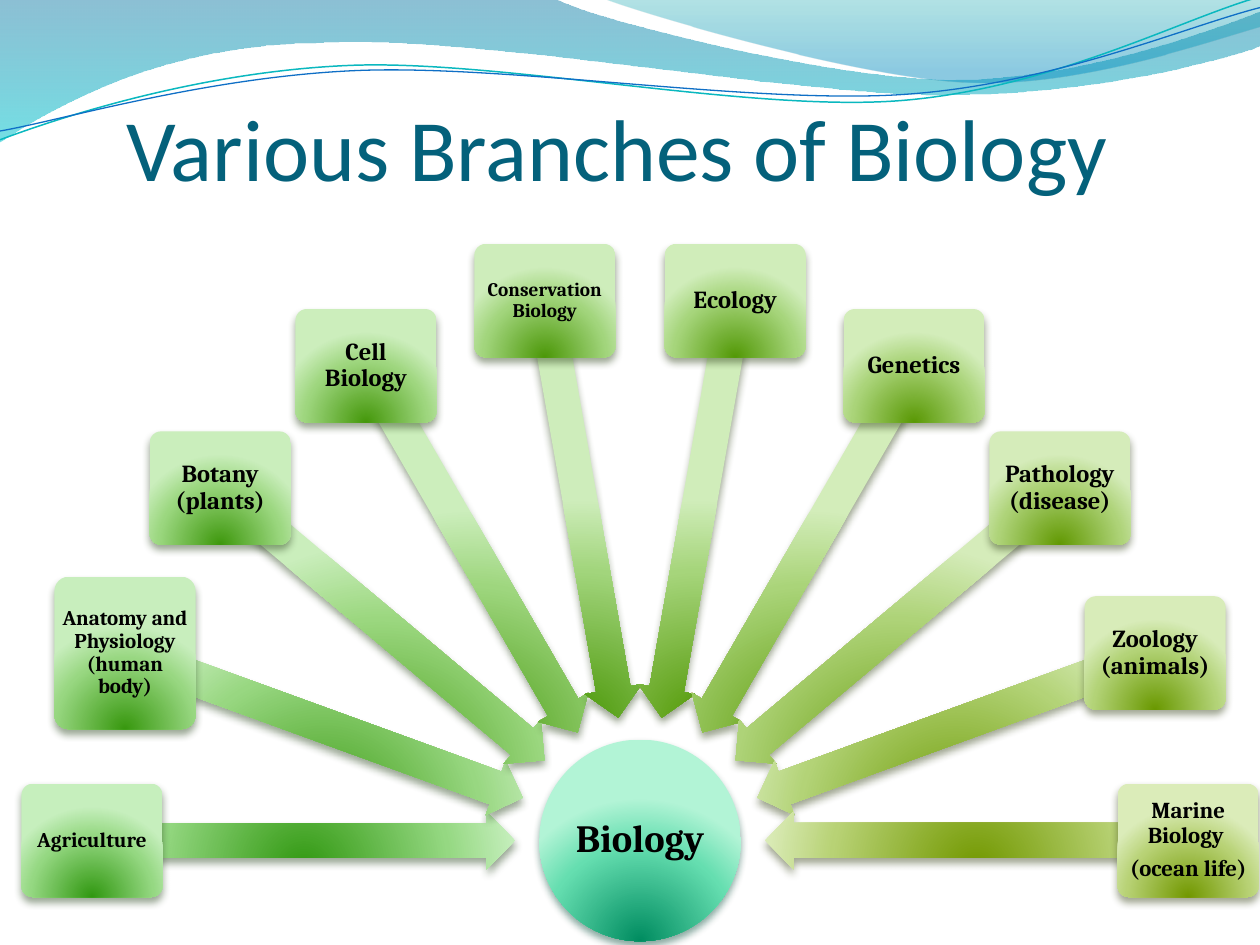
from math import cos, radians, sin

from pptx import Presentation
from pptx.dml.color import RGBColor
from pptx.enum.shapes import MSO_SHAPE
from pptx.enum.text import MSO_ANCHOR, PP_ALIGN
from pptx.oxml import parse_xml
from pptx.oxml.ns import nsdecls
from pptx.util import Inches, Pt

TITLE = "Various Branches of Biology"
HUB = "Biology"
BRANCHES = [
    ("Agriculture", 12, 0.9),
    ("Anatomy and Physiology (human body)", 12, 1.21),
    ("Botany (plants)", 14, 0.9),
    ("Cell Biology", 14, 0.9),
    ("Conservation Biology", 11, 0.9),
    ("Ecology", 14, 0.9),
    ("Genetics", 14, 0.9),
    ("Pathology (disease)", 14, 0.9),
    ("Zoology (animals)", 14, 0.9),
    ("Marine Biology \n(ocean life)", 13, 0.9),
]
COLORS = {
    "title": "04617B",
    "text": "000000",
    "hub": ("008C60", "65DEB0", "B2F4D6", "044A37"),
    "branches": [
        ("319811", "95D882", "C6EFBD", "2B4821"),
        ("38980F", "98D781", "C8EEBD", "2C4820"),
        ("3E980D", "9BD77F", "CAEEBC", "2E4720"),
        ("45980B", "9ED67E", "CCEEBC", "2F471F"),
        ("4C9809", "A2D57C", "CEEDBB", "31471E"),
        ("539907", "A6D57B", "D0EDBA", "33461D"),
        ("5A9905", "AAD479", "D3EDBA", "35461C"),
        ("629903", "AED378", "D5ECBA", "36461B"),
        ("6A9901", "B3D377", "D8ECB9", "38451A"),
        ("729800", "B8D275", "DBECB9", "3A4519"),
    ],
    "left wave": [(0, "0074A1", 45), (100, "00C6CF", 55)],
    "right wave": [(0, "00A1A9", 30), (80, "008BBF", 45)],
    "upper line": "0AB8BF",
    "lower line": "0F6FC6",
}
WAVES = [
    ("left wave", (-0.01, -0.01, 10.02, 1.14), [
        (0, -0.01), (4.4, -0.01),
        (4.76, 0.17, 6.64, 0.63, 7.58, 0.63), (8.53, 0.63, 9.58, 0.26, 10, 0.09),
        (10.01, 0.36), (9.83, 0.44, 8.7, 0.76, 7.46, 0.75),
        (6.22, 0.75, 3.82, 0.28, 2.57, 0.34), (1.29, 0.35, 0.46, 0.83, -0.01, 1.13),
        (0, -0.01),
    ]),
    ("right wave", (4.79, -0.01, 5.21, 0.7), [
        (4.79, -0.01), (5.09, 0.11, 6.82, 0.62, 7.69, 0.65),
        (8.56, 0.69, 9.61, 0.32, 10, 0.21), (10, 0), (4.79, -0.01),
    ]),
]
WAVE_LINES = [
    ("upper line", 0.85, (-0.02, 0.22, 10.02, 0.71), [
        (0, 1.11), (0.48, 0.93, 1.58, 0.57, 2.77, 0.52),
        (3.95, 0.47, 5.93, 0.89, 7.13, 0.8), (8.33, 0.71, 9.38, 0.15, 9.98, -0.02),
    ]),
    ("lower line", 0.75, (-0.02, 0.3, 10.03, 0.58), [
        (0, 1.04), (0.47, 0.96, 1.64, 0.61, 2.83, 0.56),
        (4.03, 0.51, 5.97, 0.83, 7.17, 0.75), (8.36, 0.67, 9.41, 0.21, 10, 0.06),
    ]),
]
LINE_ROTATION = 357.3
CENTER_X, CENTER_Y = 5.08, 6.67
HUB_SIZE = 1.6
ARROW_WIDTH, ARROW_HEIGHT, ARROW_RADIUS = 3.36, 0.46, 2.67
BOX_WIDTH, BOX_RADIUS = 1.12, 4.35


def add_wave(slide, box, segments, close, rotation=0):
    left, top, width, height = box
    builder = slide.shapes.build_freeform(Inches(left), Inches(top))
    builder.add_line_segments([(Inches(left + width), Inches(top + height))], close=close)
    shape = builder.convert_to_shape()
    shape.shadow.inherit = False
    shape.rotation = rotation
    outline = shape._element.spPr.find(".//{*}path")
    for step in list(outline):
        outline.remove(step)
    turn = radians(-rotation)
    for index, segment in enumerate(segments):
        kind = "moveTo" if index == 0 else "lnTo" if len(segment) == 2 else "cubicBezTo"
        points = ""
        for x, y in zip(segment[::2], segment[1::2]):
            across, down = x - left - width / 2, y - top - height / 2
            local_x = width / 2 + across * cos(turn) - down * sin(turn)
            local_y = height / 2 + across * sin(turn) + down * cos(turn)
            points += f'<a:pt x="{Inches(local_x)}" y="{Inches(local_y)}"/>'
        outline.append(parse_xml(f'<a:{kind} {nsdecls("a")}>{points}</a:{kind}>'))
    if close:
        outline.append(parse_xml(f'<a:close {nsdecls("a")}/>'))
    return shape


def set_gradient(shape, stops, direction):
    stop_xml = "".join(
        f'<a:gs pos="{position * 1000}"><a:srgbClr val="{color}">'
        f'<a:alpha val="{opacity * 1000}"/></a:srgbClr></a:gs>'
        for position, color, opacity in stops)
    shape.line.fill.background()
    shape._element.spPr.insert(2, parse_xml(
        f'<a:gradFill {nsdecls("a")} rotWithShape="1"><a:gsLst>{stop_xml}</a:gsLst>'
        f'{direction}</a:gradFill>'))


def add_glossy(slide, kind, center_x, center_y, width, height, palette):
    shape = slide.shapes.add_shape(
        kind, Inches(center_x - width / 2), Inches(center_y - height / 2),
        Inches(width), Inches(height))
    dark, middle, light, shadow = palette
    set_gradient(
        shape, [(0, dark, 100), (68, middle, 100), (100, light, 100)],
        '<a:path path="circle"><a:fillToRect l="50000" t="130000" r="50000" b="-30000"/></a:path>')
    shape._element.spPr.append(parse_xml(
        f'<a:effectLst {nsdecls("a")}><a:outerShdw blurRad="{Pt(4.5)}" dist="{Pt(3)}" '
        f'dir="5400000" rotWithShape="0"><a:srgbClr val="{shadow}"><a:alpha val="48000"/>'
        '</a:srgbClr></a:outerShdw></a:effectLst>'))
    return shape


def set_label(shape, text, size):
    frame = shape.text_frame
    frame.word_wrap = True
    frame.vertical_anchor = MSO_ANCHOR.MIDDLE
    frame.margin_left = frame.margin_right = Inches(0.03)
    frame.margin_top = frame.margin_bottom = Inches(0.03)
    frame.text = text
    for paragraph in frame.paragraphs:
        paragraph.alignment = PP_ALIGN.CENTER
        paragraph.line_spacing = 0.9
        paragraph.space_after = Pt(round(size * 0.35))
        paragraph.font.name = "Cambria"
        paragraph.font.size = Pt(size)
        paragraph.font.bold = True
        paragraph.font.color.rgb = RGBColor.from_string(COLORS["text"])


def add_title(slide):
    title = slide.shapes.title
    slide.shapes._spTree.append(title._element)
    title.left, title.top, title.width, title.height = map(Inches, (1, 0.33, 9, 1.25))
    frame = title.text_frame
    frame.text = TITLE
    frame.vertical_anchor = MSO_ANCHOR.BOTTOM
    frame.margin_left = frame.margin_right = frame.margin_bottom = 0
    frame.margin_top = Inches(0.05)
    paragraph = frame.paragraphs[0]
    paragraph.alignment = PP_ALIGN.LEFT
    paragraph.font.name = "Calibri"
    paragraph.font.size = Pt(50)
    paragraph.font.color.rgb = RGBColor.from_string(COLORS["title"])


def main():
    """Build the slide of biology branches pointing at a central hub."""
    presentation = Presentation()
    presentation.slide_width, presentation.slide_height = Inches(10), Inches(7.5)
    slide = presentation.slides.add_slide(presentation.slide_layouts[5])

    for name, box, segments in WAVES:
        wave = add_wave(slide, box, segments, True)
        set_gradient(wave, COLORS[name], '<a:lin ang="5400000" scaled="0"/>')
    for name, width, box, segments in WAVE_LINES:
        line = add_wave(slide, box, segments, False, LINE_ROTATION)
        line.fill.background()
        line.line.color.rgb = RGBColor.from_string(COLORS[name])
        line.line.width = Pt(width)
    add_title(slide)

    hub = add_glossy(slide, MSO_SHAPE.OVAL, CENTER_X, CENTER_Y,
                     HUB_SIZE, HUB_SIZE, COLORS["hub"])
    set_label(hub, HUB, 22)
    angle_step = 180 / (len(BRANCHES) - 1)
    for index, (text, size, height) in enumerate(BRANCHES):
        angle = index * angle_step
        across, up = cos(radians(angle)), sin(radians(angle))
        palette = COLORS["branches"][index]
        arrow = add_glossy(slide, MSO_SHAPE.LEFT_ARROW, CENTER_X - ARROW_RADIUS * across,
                           CENTER_Y - ARROW_RADIUS * up, ARROW_WIDTH, ARROW_HEIGHT, palette)
        arrow.adjustments[0] = 0.6
        arrow.rotation = (180 + angle) % 360
        box = add_glossy(slide, MSO_SHAPE.ROUNDED_RECTANGLE, CENTER_X - BOX_RADIUS * across,
                         CENTER_Y - BOX_RADIUS * up, BOX_WIDTH, height, palette)
        box.adjustments[0] = 0.1
        set_label(box, text, size)
    presentation.save("out.pptx")


if __name__ == "__main__":
    main()
